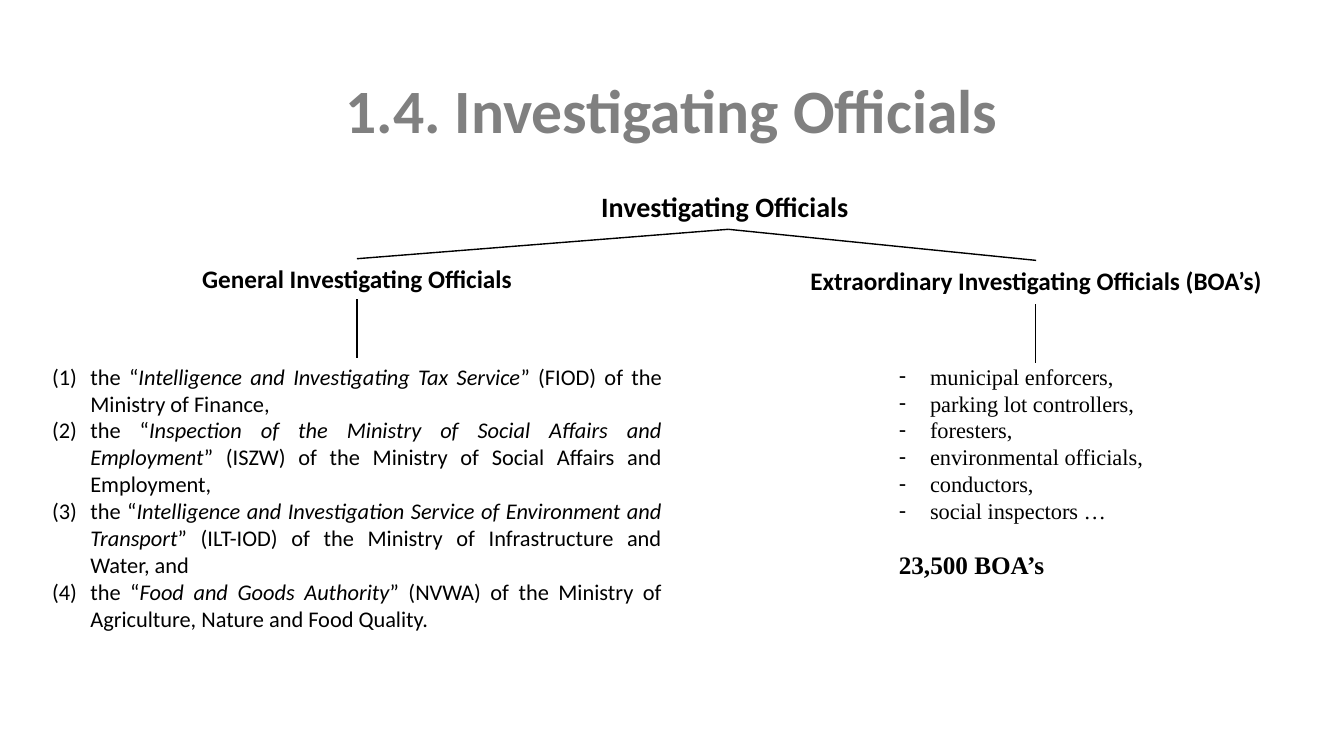
from lxml import etree
from pptx import Presentation
from pptx.dml.color import RGBColor
from pptx.enum.shapes import MSO_CONNECTOR
from pptx.enum.text import MSO_ANCHOR, MSO_AUTO_SIZE, PP_ALIGN
from pptx.oxml.ns import qn
from pptx.util import Inches, Pt

LINE = MSO_CONNECTOR.STRAIGHT
LEFT, MID, FULL = PP_ALIGN.LEFT, PP_ALIGN.CENTER, PP_ALIGN.JUSTIFY
COLORS = {"title": "808080", "ink": "000000"}
SANS, SERIF = "Calibri", "Times New Roman"
COLS, ROWS = 16, 9
TOP, BOTTOM = 0, 2

SERVICES = [
    ("Intelligence and Investigating Tax Service",
     "” (FIOD) of the Ministry of Finance,"),
    ("Inspection of the Ministry of Social Affairs and Employment",
     "” (ISZW) of the Ministry of Social Affairs and Employment,"),
    ("Intelligence and Investigation Service of Environment and Transport",
     "” (ILT-IOD) of the Ministry of Infrastructure and Water, and"),
    ("Food and Goods Authority",
     "” (NVWA) of the Ministry of Agriculture, Nature and Food Quality."),
]
JOBS = ["municipal enforcers,", "parking lot controllers,", "foresters,",
        "environmental officials,", "conductors,", "social inspectors …"]


class Board:
    """Holds the slide and places elements in grid columns and rows."""

    def __init__(self, deck):
        self.slide = deck.slides.add_slide(deck.slide_layouts[3])
        self.col = deck.slide_width / COLS
        self.row = deck.slide_height / ROWS

    def scale(self, x, y):
        return int(x * self.col), int(y * self.row)

    def font(self, para, size, face=SANS, bold=False, color="ink"):
        para.font.size, para.font.name, para.font.bold = Pt(size), face, bold
        para.font.color.rgb = RGBColor.from_string(COLORS[color])

    def holder(self, index, x, y, w, h):
        """Move a template placeholder and return it."""
        shape = self.slide.placeholders[index]
        shape.left, shape.top = self.scale(x, y)
        shape.width, shape.height = self.scale(w, h)
        shape.text_frame.auto_size = MSO_AUTO_SIZE.NONE
        return shape

    def title(self, text, *box):
        frame = self.holder(0, *box).text_frame
        frame.vertical_anchor = MSO_ANCHOR.MIDDLE
        para = frame.paragraphs[0]
        para.text, para.alignment, para.line_spacing = text, MID, 0.9
        self.font(para, 44, bold=True, color="title")

    def item(self, frame, parts, bullet, indent=0, align=LEFT, before=0, **style):
        """Add a paragraph; every second part is italic."""
        para = frame.paragraphs[0]
        if para.runs:
            para = frame.add_paragraph()
        for i, text in enumerate(parts):
            run = para.add_run()
            run.text = text
            if i % 2:
                run.font.italic = True
        props = para._p.get_or_add_pPr()
        props.set("marL", str(Inches(indent)))
        props.set("indent", str(-Inches(indent)))
        tag, attrs = bullet
        etree.SubElement(props, qn(tag), attrs)
        para.alignment, para.line_spacing = align, 1.0
        para.space_before, para.space_after = Pt(before), Pt(0)
        self.font(para, **style)

    def label(self, text, size, align, wrap, x, y, w, h):
        box = self.slide.shapes.add_textbox(*self.scale(x, y), *self.scale(w, h))
        box.text_frame.word_wrap = wrap
        para = box.text_frame.paragraphs[0]
        para.text, para.alignment = text, align
        self.font(para, size, bold=True)
        return box

    def line(self, start, end, above=None, below=None):
        """Draw a line, joined to the boxes above and below if given."""
        link = self.slide.shapes.add_connector(
            LINE, *self.scale(*start), *self.scale(*end))
        link.line.width = Pt(1)
        link.line.color.rgb = RGBColor.from_string(COLORS["ink"])
        etree.SubElement(link._element.spPr, qn("a:effectLst"))
        if above is not None:
            link.begin_connect(above, BOTTOM)
        if below is not None:
            link.end_connect(below, TOP)


def main():
    deck = Presentation()
    deck.slide_width, deck.slide_height = Inches(13.333), Inches(7.5)
    board = Board(deck)
    board.title("1.4. Investigating Officials", 1.1, 0.48, 13.8, 1.74)

    left = board.holder(1, 0.5, 4.26, 7.5, 3.35)
    for name, rest in SERVICES:
        board.item(left.text_frame, ["the “", name, rest],
                   ("a:buAutoNum", {"type": "arabicParenBoth"}),
                   0.38, FULL, size=16)

    right = board.holder(2, 10.58, 4.26, 4.81, 2.75)
    for job in JOBS:
        board.item(right.text_frame, [job], ("a:buChar", {"char": "-"}),
                   0.31, size=16, face=SERIF)
    board.item(right.text_frame, ["23,500 BOA’s"], ("a:buNone", {}),
               before=18, size=18, face=SERIF, bold=True)

    head = board.label("Investigating Officials", 20, LEFT, False,
                       7.04, 2.2, 3.26, 0.53)
    general = board.label("General Investigating Officials", 18, MID, True,
                          0, 3.08, 8.5, 0.48)
    extra = board.label("Extraordinary Investigating Officials (BOA’s)", 18,
                        MID, True, 8.67, 3.1, 7.33, 0.48)

    fork, mid, side = (8.67, 2.73), 4.25, 12.33
    board.line(fork, (mid, 3.08), head, general)
    board.line(fork, (side, 3.1), head, extra)
    board.line((mid, 3.56), (mid, 4.26), general, left)
    board.line((side, 3.62), (side, 4.32))
    deck.save("out.pptx")


if __name__ == "__main__":
    main()
